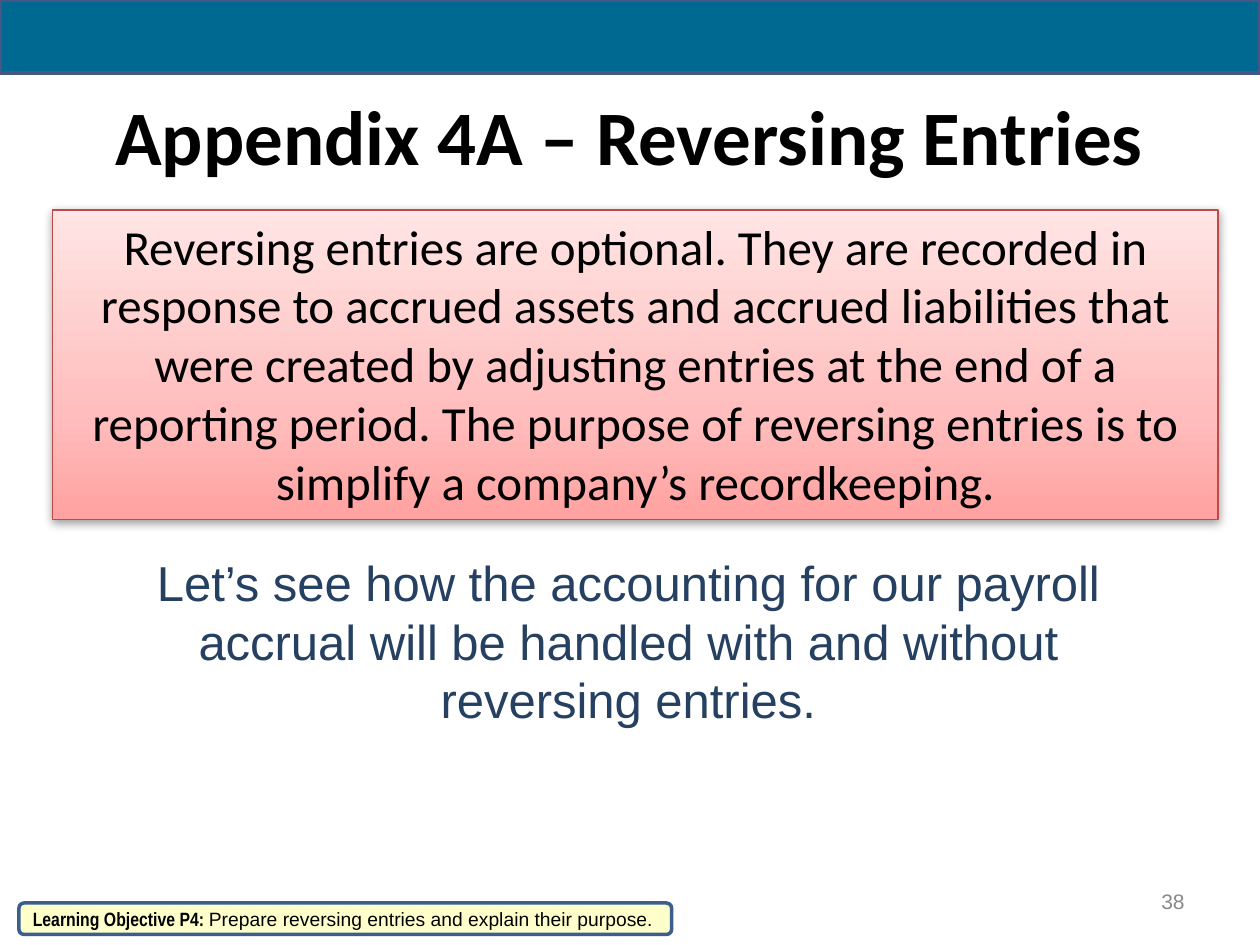
from lxml import etree
from pptx import Presentation
from pptx.dml.color import RGBColor
from pptx.enum.shapes import MSO_SHAPE as SHAPE
from pptx.enum.text import MSO_ANCHOR as ANCHOR, PP_ALIGN as ALIGN
from pptx.oxml import parse_xml
from pptx.oxml.ns import nsdecls, qn
from pptx.util import Pt

BLACK = RGBColor(0, 0, 0)
NAVY = RGBColor(0x25, 0x40, 0x61)
GRAY = RGBColor(0x89, 0x89, 0x89)
TEAL = RGBColor(0x00, 0x69, 0x91)
INDIGO = RGBColor(0x47, 0x57, 0x85)
RED = RGBColor(0xBE, 0x4B, 0x48)
CREAM = RGBColor(0xFF, 0xFF, 0xCC)
BLUE = RGBColor(0x3A, 0x5F, 0x8C)
PINKS = [(0, RGBColor(0xFF, 0xA2, 0xA1)), (35, RGBColor(0xFF, 0xBE, 0xBD)),
         (100, RGBColor(0xFF, 0xE5, 0xE5))]

# Text boxes: text, box (left, top, width, height), size, font, colour, bold, align, anchor
TEXTS = [
    ("Appendix 4A – Reversing Entries", (36, 42, 648, 70),
     44, "Calibri", BLACK, True, ALIGN.CENTER, ANCHOR.MIDDLE),
    ("Let’s see how the accounting for our payroll accrual will be handled "
     "with and without reversing entries.", (62, 312, 594, 109),
     28, "Arial", NAVY, False, ALIGN.CENTER, ANCHOR.TOP),
    ("38", (516, 500.5, 168, 28.75),
     12, "Arial", GRAY, False, ALIGN.RIGHT, ANCHOR.MIDDLE),
]
DEFINITION = (
    "Reversing entries are optional. They are recorded in response to accrued "
    "assets and accrued liabilities that were created by adjusting entries at "
    "the end of a reporting period. The purpose of reversing entries is to "
    "simplify a company’s recordkeeping.")
OBJECTIVE = [("Learning Objective P4: ", "Arial Narrow", True),
             ("Prepare reversing entries and explain their purpose.", "Arial", False)]


def add_box(slide, kind, box, line, width, fill=None):
    sp = slide.shapes.add_shape(kind, *map(Pt, box))
    sp.shadow.inherit = False
    sp.line.color.rgb = line
    sp.line.width = Pt(width)
    if fill is not None:
        sp.fill.solid()
        sp.fill.fore_color.rgb = fill
    return sp


def write(sp, text, size, font, color, bold, align, anchor):
    tf = sp.text_frame
    tf.word_wrap = True
    tf.vertical_anchor = anchor
    p = tf.paragraphs[0]
    p.text = text
    p.alignment = align
    f = p.font
    f.size, f.name, f.bold = Pt(size), font, bold
    f.color.rgb = color


def add_gradient(sp, stops):
    sp.fill.gradient()
    grad = sp._element.spPr.find(qn("a:gradFill"))
    for child in list(grad):
        grad.remove(child)
    gs_list = etree.SubElement(grad, qn("a:gsLst"))
    for pos, color in stops:
        gs = etree.SubElement(gs_list, qn("a:gs"), pos=str(pos * 1000))
        etree.SubElement(gs, qn("a:srgbClr"), val=str(color))
    etree.SubElement(grad, qn("a:lin"), ang="16200000", scaled="0")


def add_shadow(sp):
    sp._element.spPr.find(qn("a:effectLst")).append(parse_xml(
        f'<a:outerShdw {nsdecls("a")} blurRad="{Pt(5)}" dist="{Pt(1.6)}" '
        'dir="5400000" rotWithShape="0"><a:srgbClr val="000000">'
        '<a:alpha val="38000"/></a:srgbClr></a:outerShdw>'))


prs = Presentation()
prs.slide_width, prs.slide_height = Pt(720), Pt(540)
s = prs.slides.add_slide(prs.slide_layouts[6])

# Title, lead-in and page number
for text, box, *style in TEXTS:
    write(s.shapes.add_textbox(*map(Pt, box)), text, *style)

# Definition panel
panel = add_box(s, SHAPE.RECTANGLE, (30, 120, 666, 177), RED, 0.75)
add_gradient(panel, PINKS)
add_shadow(panel)
write(panel, DEFINITION, 28, "Calibri", BLACK, False, ALIGN.CENTER, ANCHOR.TOP)

# Top band
add_box(s, SHAPE.RECTANGLE, (0, 0, 720, 42), INDIGO, 2.25, TEAL)

# Learning objective tag
tag = add_box(s, SHAPE.ROUNDED_RECTANGLE, (10.8, 516, 373, 18), BLUE, 2, CREAM)
tf = tag.text_frame
tf.word_wrap = True
tf.vertical_anchor = ANCHOR.MIDDLE
p = tf.paragraphs[0]
p.alignment = ALIGN.LEFT
p.font.size = Pt(11)
p.font.color.rgb = BLACK
for text, font, bold in OBJECTIVE:
    r = p.add_run()
    r.text, r.font.name, r.font.bold = text, font, bold

prs.save("out.pptx")
